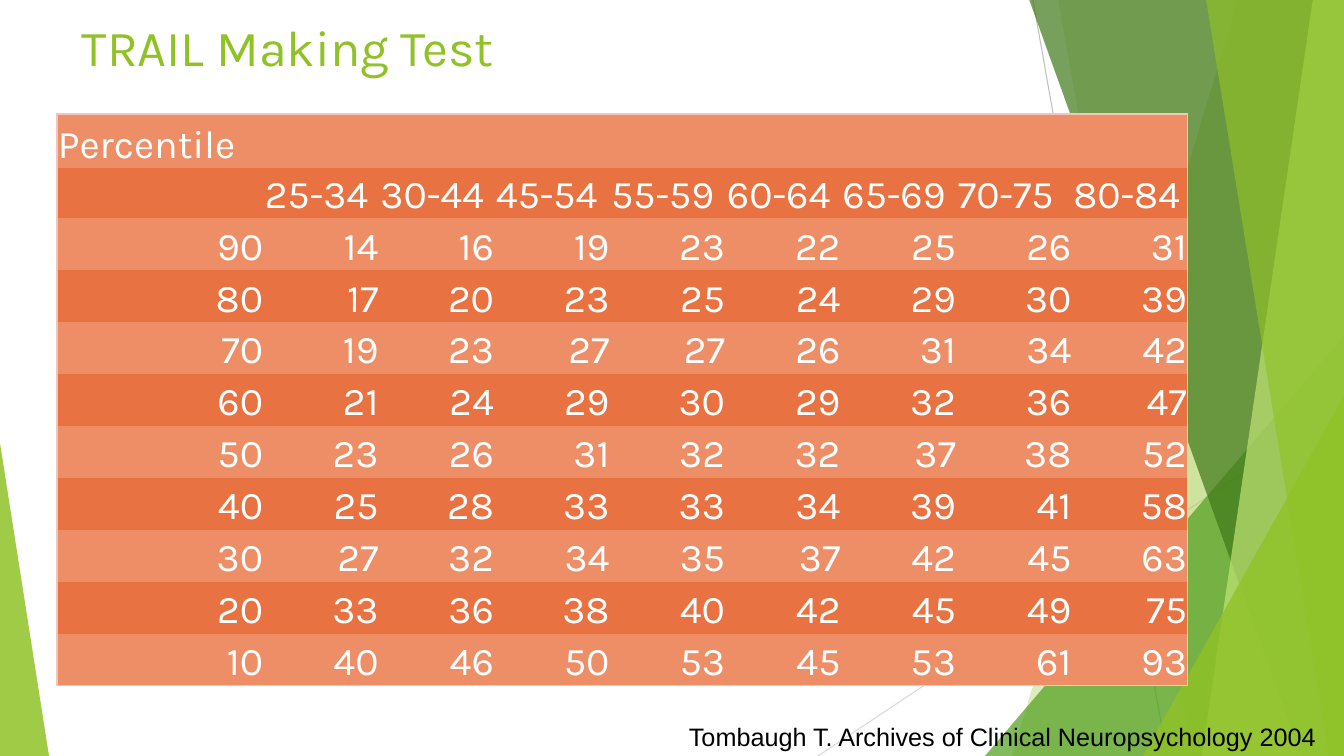
"""Builds the TRAIL Making Test percentile slide."""
from pptx import Presentation
from pptx.dml.color import RGBColor
from pptx.enum.shapes import MSO_CONNECTOR, MSO_SHAPE
from pptx.enum.text import MSO_ANCHOR, PP_ALIGN
from pptx.oxml.ns import qn
from pptx.util import Emu, Pt
from lxml import etree

STRAIGHT = MSO_CONNECTOR.STRAIGHT
TRIANGLE = MSO_SHAPE.ISOSCELES_TRIANGLE
BOTTOM = MSO_ANCHOR.BOTTOM
LEFT, RIGHT = PP_ALIGN.LEFT, PP_ALIGN.RIGHT
PX = 914400 / 100.8
PLAIN_TABLE = "{2D5ABB26-0587-4C30-8999-92F81FD0307C}"
COLORS = {
    "green": "90C226", "leaf": "54A021", "forest": "3F7819", "lime": "C0E474",
    "gray": "BFBFBF", "pale gray": "D9D9D9", "white": "FFFFFF", "black": "000000",
    "orange": "E87241", "light orange": "ED8E67", "edge": "F3C6BD",
}
AGE_GROUPS = ["25-34", "30-44", "45-54", "55-59", "60-64", "65-69", "70-75", "80-84"]
SECONDS = {
    90: [14, 16, 19, 23, 22, 25, 26, 31],
    80: [17, 20, 23, 25, 24, 29, 30, 39],
    70: [19, 23, 27, 27, 26, 31, 34, 42],
    60: [21, 24, 29, 30, 29, 32, 36, 47],
    50: [23, 26, 31, 32, 32, 37, 38, 52],
    40: [25, 28, 33, 33, 34, 39, 41, 58],
    30: [27, 32, 34, 35, 37, 42, 45, 63],
    20: [33, 36, 38, 40, 42, 45, 49, 75],
    10: [40, 46, 50, 53, 45, 53, 61, 93],
}


def px(length):
    return Emu(round(length * PX))


def rgb(color):
    return RGBColor.from_string(COLORS[color])


def write(frame, text, size=28, font="Karla", color="white", align=LEFT):
    paragraph = frame.paragraphs[0]
    paragraph.alignment = align
    run = paragraph.add_run()
    run.text = text
    run.font.size = Pt(size)
    run.font.name = font
    run.font.color.rgb = rgb(color)


class SlideBuilder:
    def __init__(self, slide):
        self.slide = slide
        self.shapes = slide.shapes

    def paint(self, shape, color, opacity):
        shape.shadow.inherit = False
        shape.line.fill.background()
        shape.fill.solid()
        shape.fill.fore_color.rgb = rgb(color)
        tint = shape.fill._xPr.find(qn("a:solidFill"))[0]
        etree.SubElement(tint, qn("a:alpha"), val=str(opacity * 1000))

    def line(self, start, end, color):
        connector = self.shapes.add_connector(STRAIGHT, *map(px, start + end))
        connector.line.color.rgb = rgb(color)
        connector.line.width = Pt(0.75)
        etree.SubElement(connector._element.spPr, qn("a:effectLst"))

    def band(self, top_x, bottom_x, color, opacity):
        outline = self.shapes.build_freeform(top_x, -1, scale=PX)
        outline.add_line_segments([(1344, -1), (1344, 756), (bottom_x, 756)])
        self.paint(outline.convert_to_shape(), color, opacity)

    def triangle(self, box, apex, color, opacity):
        triangle = self.shapes.add_shape(TRIANGLE, *map(px, box))
        triangle.adjustments[0] = apex
        self.paint(triangle, color, opacity)

    def text(self, box, text, wrap=True, **style):
        frame = self.shapes.add_textbox(*map(px, box)).text_frame
        frame.word_wrap = wrap
        write(frame, text, **style)

    def border(self, cell, sides):
        properties = cell._tc.get_or_add_tcPr()
        for side in sides:
            edge = etree.SubElement(properties, qn(f"a:ln{side}"), w=str(Pt(1)))
            fill = etree.SubElement(edge, qn("a:solidFill"))
            etree.SubElement(fill, qn("a:srgbClr"), val=COLORS["edge"])

    def table(self, box, rows, widths, heights):
        last_row, last_column = len(rows) - 1, len(widths) - 1
        table = self.shapes.add_table(len(rows), len(widths), *map(px, box)).table
        table.first_row = table.horz_banding = False
        table._tbl.tblPr.find(qn("a:tableStyleId")).text = PLAIN_TABLE
        for column, width in zip(table.columns, widths):
            column.width = px(width)
        for r, (values, height) in enumerate(zip(rows, heights)):
            table.rows[r].height = px(height)
            for c, value in enumerate(values):
                cell = table.cell(r, c)
                on_edge = {"L": c == 0, "R": c == last_column,
                           "T": r == 0, "B": r == last_row}
                self.border(cell, [side for side, outer in on_edge.items() if outer])
                cell.fill.solid()
                cell.fill.fore_color.rgb = rgb("orange" if r % 2 else "light orange")
                cell.vertical_anchor = BOTTOM
                cell.margin_left = cell.margin_right = cell.margin_top = px(1)
                cell.margin_bottom = 0
                if value != "":
                    write(cell.text_frame, str(value), align=LEFT if r < 2 else RIGHT)


def main():
    deck = Presentation()
    deck.slide_width, deck.slide_height = px(1344), px(756)
    page = SlideBuilder(deck.slides.add_slide(deck.slide_layouts[6]))

    page.line((1033, 0), (1167, 756), "gray")
    page.line((1344, 406), (818, 756), "pale gray")
    page.band(1238, 1012, "green", 30)
    page.band(1058, 1192, "green", 20)
    page.triangle((985, 336, 359, 420), 1, "leaf", 72)
    page.band(1029, 1301, "forest", 70)
    page.band(1313, 1202, "lime", 70)
    page.band(1206, 1329, "green", 65)
    page.triangle((1143, 396, 201, 360), 1, "green", 80)
    page.triangle((0, 443, 49, 313), 0, "green", 85)

    page.text((72, 11, 1037, 154), "TRAIL Making Test", size=36, color="green")
    groups = len(AGE_GROUPS)
    rows = [["Percentile"] + [""] * groups, [""] + AGE_GROUPS]
    rows += [[percentile, *times] for percentile, times in SECONDS.items()]
    widths = [207] + [(1131 - 207) / groups] * groups
    heights = [54, 50] + [52] * len(SECONDS)
    page.table((57, 114, 1131, 572), rows, widths, heights)
    page.text((679, 716, 653, 40), "Tombaugh T. Archives of Clinical Neuropsychology 2004",
              wrap=False, size=18, font="Arial", color="black")
    deck.save("out.pptx")


if __name__ == "__main__":
    main()
